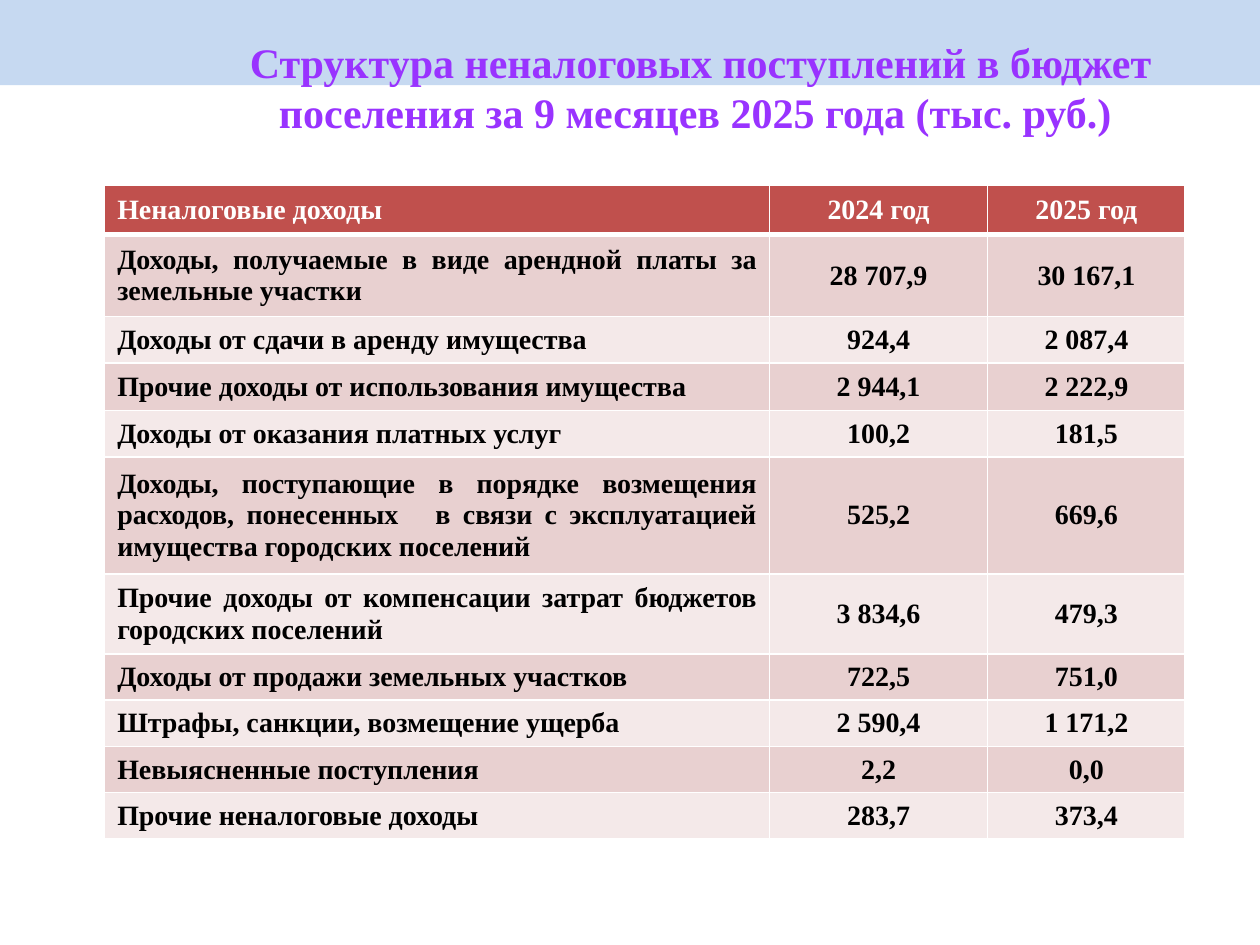
"""Build the slide comparing non-tax budget revenue of 2024 and 2025."""
from dataclasses import dataclass

from lxml import etree
from pptx import Presentation
from pptx.dml.color import RGBColor
from pptx.enum.shapes import MSO_SHAPE
from pptx.enum.text import MSO_ANCHOR, PP_ALIGN
from pptx.oxml.ns import qn
from pptx.slide import Slide
from pptx.table import _Cell
from pptx.text.text import _Paragraph
from pptx.util import Pt

RECTANGLE = MSO_SHAPE.RECTANGLE
TOP, MIDDLE = MSO_ANCHOR.TOP, MSO_ANCHOR.MIDDLE
LEFT, CENTER, JUSTIFY = PP_ALIGN.LEFT, PP_ALIGN.CENTER, PP_ALIGN.JUSTIFY


@dataclass(frozen=True)
class Theme:
    font: str = "Times New Roman"
    title_size: float = 24
    table_size: float = 16
    title: str = "9933FF"
    band: str = "C6D9F1"
    header: str = "C0504D"
    header_text: str = "FFFFFF"
    body_text: str = "000000"
    border: str = "FFFFFF"
    stripes: tuple[str, str] = ("E8D0D0", "F4E9E9")
    thin: float = 1
    thick: float = 3


@dataclass(frozen=True)
class Revenue:
    name: str
    year_2024: str
    year_2025: str
    height: float


THEME = Theme()
TITLE = "Структура неналоговых поступлений в бюджет поселения за 9 месяцев 2025 года (тыс. руб.) "
COLUMN_WIDTHS = (380, 124.5, 113)
HEADER = Revenue("Неналоговые доходы", "2024 год", "2025 год", 28.3)
REVENUES = (
    Revenue("Доходы, получаемые в виде арендной платы за земельные участки", "28 707,9", "30 167,1", 46.8),
    Revenue("Доходы от сдачи в аренду имущества", "924,4", "2 087,4", 25),
    Revenue("Прочие доходы от использования имущества ", "2 944,1", "2 222,9", 27.4),
    Revenue("Доходы от оказания платных услуг", "100,2", "181,5", 25),
    Revenue(
        "Доходы, поступающие в порядке возмещения расходов, понесенных   в связи с эксплуатацией "
        "имущества городских поселений", "525,2", "669,6", 67),
    Revenue("Прочие доходы от компенсации затрат бюджетов городских поселений", "3 834,6", "479,3", 42.4),
    Revenue("Доходы от продажи земельных участков", "722,5", "751,0", 25),
    Revenue("Штрафы, санкции, возмещение ущерба", "2 590,4", "1 171,2", 25),
    Revenue("Невыясненные поступления", "2,2", "0,0", 25),
    Revenue("Прочие неналоговые доходы", "283,7", "373,4", 25),
)


def format_paragraph(para: _Paragraph, size: float, color: str, align: PP_ALIGN) -> None:
    para.alignment = align
    for span in para.runs:
        span.font.name = THEME.font
        span.font.size = Pt(size)
        span.font.bold = True
        span.font.color.rgb = RGBColor.from_string(color)


def set_borders(cell: _Cell, bottom: float, top: float) -> None:
    properties = cell._tc.get_or_add_tcPr()
    widths = {"a:lnL": THEME.thin, "a:lnR": THEME.thin, "a:lnT": top, "a:lnB": bottom}
    for position, (tag, width) in enumerate(widths.items()):
        line = etree.Element(qn(tag), w=str(Pt(width)))
        fill = etree.SubElement(line, qn("a:solidFill"))
        etree.SubElement(fill, qn("a:srgbClr"), val=THEME.border)
        properties.insert(position, line)


def draw_title(page: Slide) -> None:
    band = page.shapes.add_shape(RECTANGLE, Pt(0), Pt(0), Pt(720), Pt(48.6))
    band.shadow.inherit = False
    band.fill.solid()
    band.fill.fore_color.rgb = RGBColor.from_string(THEME.band)
    band.line.fill.background()

    box = page.shapes.add_textbox(Pt(80.6), Pt(15.1), Pt(639.4), Pt(64))
    frame = box.text_frame
    frame.word_wrap = True
    frame.vertical_anchor = TOP
    frame.margin_top = Pt(5.5)
    frame.text = TITLE
    format_paragraph(frame.paragraphs[0], THEME.title_size, THEME.title, CENTER)


def draw_table(page: Slide) -> None:
    rows = (HEADER, *REVENUES)
    height = sum(row.height for row in rows)
    table = page.shapes.add_table(
        len(rows), len(COLUMN_WIDTHS), Pt(59.8), Pt(105.8), Pt(sum(COLUMN_WIDTHS)), Pt(height)
    ).table
    for column, width in zip(table.columns, COLUMN_WIDTHS):
        column.width = Pt(width)
    for row_index, row in enumerate(rows):
        table.rows[row_index].height = Pt(row.height)
        is_header = row_index == 0
        fill = THEME.header if is_header else THEME.stripes[(row_index - 1) % 2]
        color = THEME.header_text if is_header else THEME.body_text
        name_align = LEFT if is_header else JUSTIFY
        bottom = THEME.thick if is_header else THEME.thin
        top = THEME.thick if row_index == 1 else THEME.thin
        for column_index, text in enumerate((row.name, row.year_2024, row.year_2025)):
            cell = table.cell(row_index, column_index)
            cell.text_frame.text = text
            cell.vertical_anchor = MIDDLE
            cell.fill.solid()
            cell.fill.fore_color.rgb = RGBColor.from_string(fill)
            set_borders(cell, bottom, top)
            align = CENTER if column_index else name_align
            format_paragraph(cell.text_frame.paragraphs[0], THEME.table_size, color, align)


def main() -> None:
    deck = Presentation()
    deck.slide_width, deck.slide_height = Pt(720), Pt(540)
    page = deck.slides.add_slide(deck.slide_layouts[6])
    draw_title(page)
    draw_table(page)
    deck.save("out.pptx")


if __name__ == "__main__":
    main()
